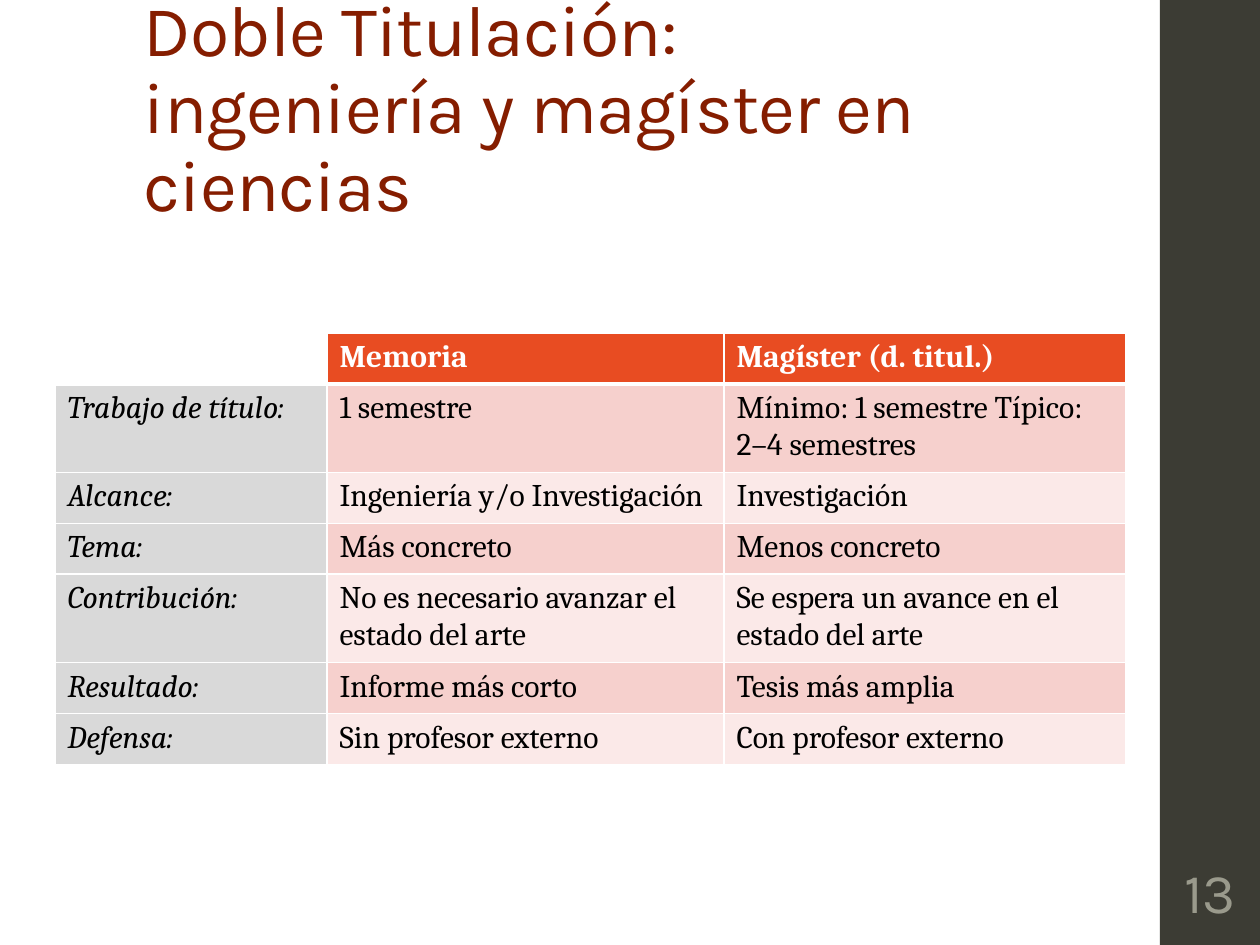
from lxml.etree import SubElement
from pptx import Presentation
from pptx.dml.color import RGBColor
from pptx.enum.shapes import MSO_SHAPE
from pptx.enum.text import MSO_ANCHOR, MSO_AUTO_SIZE, PP_ALIGN
from pptx.oxml.ns import qn
from pptx.util import Emu, Pt

EMU_PER_PX = 914400 // 126
COLORS = {
    "title": "851D00", "sidebar": "3C3C34", "number": "9A9A8C",
    "white": "FFFFFF", "black": "000000", "header": "E84C22",
    "label": "D9D9D9", "odd": "F6D0CD", "even": "FBE9E8",
}
HEADINGS = ("", "Memoria", "Magíster (d. titul.)")
COMPARISON = (
    ("Trabajo de título:", "1 semestre", "Mínimo: 1 semestre Típico: 2–4 semestres"),
    ("Alcance:", "Ingeniería y/o Investigación", "Investigación"),
    ("Tema:", "Más concreto", "Menos concreto"),
    ("Contribución:", "No es necesario avanzar el estado del arte",
     "Se espera un avance en el estado del arte"),
    ("Resultado:", "Informe más corto", "Tesis más amplia"),
    ("Defensa:", "Sin profesor externo", "Con profesor externo"),
)
COLUMN_WIDTHS = (272, 397, 402)
ROW_HEIGHTS = (51, 85, 51, 51, 85, 51, 51)


def px(length):
    """Turn whole pixels into EMU."""
    return Emu(length * EMU_PER_PX)


def color(name):
    """Look up a named colour."""
    return RGBColor.from_string(COLORS[name])


def apply(target, **values):
    """Set each given attribute on the target."""
    for name, value in values.items():
        setattr(target, name, value)


def box(left, top, width, height):
    """Return a position and size as a dict of EMU lengths."""
    names = ("left", "top", "width", "height")
    return dict(zip(names, map(px, (left, top, width, height))))


def format_font(font, color_name, **values):
    """Give a font its colour and other values."""
    apply(font, **values)
    font.color.rgb = color(color_name)


def add_sidebar(slide):
    """Add the dark band at the right."""
    band = slide.shapes.add_shape(MSO_SHAPE.RECTANGLE, **box(1160, 0, 101, 945))
    band.shadow.inherit = False
    band.fill.solid()
    band.fill.fore_color.rgb = color("sidebar")
    band.line.fill.background()


def set_title(slide, text):
    """Place and format the title."""
    title = slide.shapes.title
    apply(title, **box(131, 50, 1002, 183))
    apply(title.text_frame, text=text, word_wrap=True,
          vertical_anchor=MSO_ANCHOR.BOTTOM, auto_size=MSO_AUTO_SIZE.NONE)
    paragraph = title.text_frame.paragraphs[0]
    apply(paragraph, alignment=PP_ALIGN.LEFT, line_spacing=0.9)
    for run in paragraph.runs:
        format_font(run.font, "title", name="Karla", size=Pt(41))
        run.font._element.set("spc", "-50")


def add_page_number(slide, text):
    """Add the page number on the band."""
    frame = slide.shapes.add_textbox(**box(1163, 850, 94, 82)).text_frame
    apply(frame, text=text, word_wrap=True, vertical_anchor=MSO_ANCHOR.MIDDLE,
          margin_left=px(4), margin_right=px(4))
    paragraph = frame.paragraphs[0]
    paragraph.alignment = PP_ALIGN.CENTER
    format_font(paragraph.runs[0].font, "number", name="Karla", size=Pt(32))


def set_borders(cell, **widths):
    """Draw white borders with widths in points, keyed by side."""
    properties = cell._tc.get_or_add_tcPr()
    for side in "LRTB":
        line = SubElement(properties, qn(f"a:ln{side}"), w=str(Pt(widths.get(side, 1))))
        fill = SubElement(line, qn("a:solidFill"))
        SubElement(fill, qn("a:srgbClr"), val=COLORS["white"])


def cell_fill(row, column):
    """Name the fill colour of a cell."""
    if row == 0:
        return "header" if column else "white"
    if column == 0:
        return "label"
    return "odd" if row % 2 else "even"


def format_cell(cell, row, column, text):
    """Fill, border and write one table cell."""
    set_borders(cell, **{0: {"B": 3}, 1: {"T": 3}}.get(row, {}))
    cell.fill.solid()
    cell.fill.fore_color.rgb = color(cell_fill(row, column))
    cell.text = text
    format_font(cell.text_frame.paragraphs[0].font, "black", size=Pt(18))
    for run in cell.text_frame.paragraphs[0].runs:
        format_font(run.font, "black" if row else "white", name="Cambria",
                    size=Pt(18), bold=row == 0, italic=row > 0 and column == 0)


def add_comparison_table(slide):
    """Add the table comparing both degrees."""
    rows = (HEADINGS, *COMPARISON)
    table = slide.shapes.add_table(
        len(rows), len(HEADINGS),
        **box(55, 333, sum(COLUMN_WIDTHS), sum(ROW_HEIGHTS))).table
    for column, width in zip(table.columns, COLUMN_WIDTHS):
        column.width = px(width)
    for row, height in zip(table.rows, ROW_HEIGHTS):
        row.height = px(height)
    for row, texts in enumerate(rows):
        for column, text in enumerate(texts):
            format_cell(table.cell(row, column), row, column, text)


def main():
    """Build and save the slide."""
    presentation = Presentation()
    apply(presentation, slide_width=px(1260), slide_height=px(945))
    slide = presentation.slides.add_slide(presentation.slide_layouts[5])
    add_sidebar(slide)
    set_title(slide, "Doble Titulación: \vingeniería y magíster en ciencias")
    add_page_number(slide, "13")
    add_comparison_table(slide)
    presentation.save("out.pptx")


if __name__ == "__main__":
    main()
